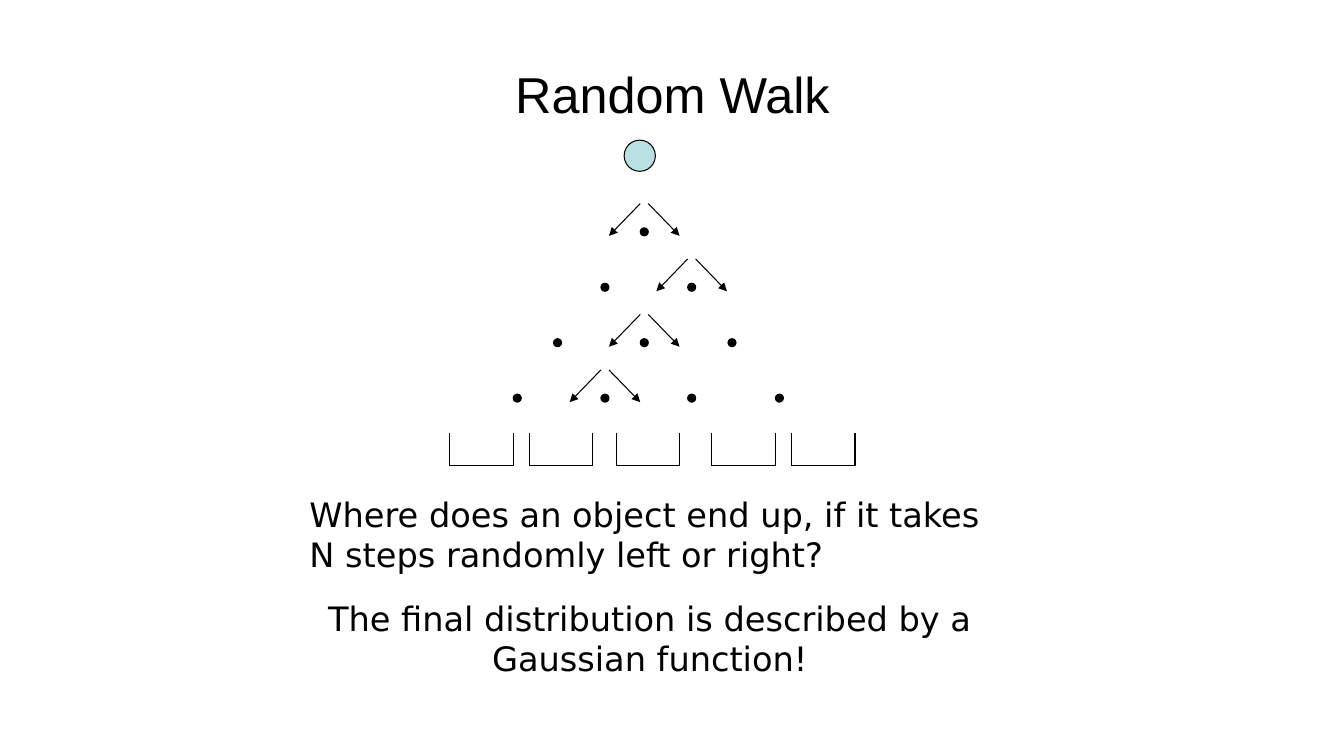
from lxml import etree
from pptx import Presentation
from pptx.dml.color import RGBColor
from pptx.enum.shapes import MSO_CONNECTOR, MSO_SHAPE
from pptx.enum.text import MSO_ANCHOR, PP_ALIGN
from pptx.oxml.ns import qn
from pptx.util import Inches, Pt

OVAL = MSO_SHAPE.OVAL
STRAIGHT = MSO_CONNECTOR.STRAIGHT
LEFT, CENTER = PP_ALIGN.LEFT, PP_ALIGN.CENTER
TOP, MIDDLE = MSO_ANCHOR.TOP, MSO_ANCHOR.MIDDLE

COLORS = {"ink": "000000", "ball": "BBE0E3", "paper": "FFFFFF"}
LINE_WIDTH = Pt(0.75)
TITLE_FONT = {"name": "Arial", "size": Pt(36)}
BODY_FONT = {"name": "DejaVu Sans", "size": Pt(24)}

# Each peg row: offsets of its pegs from the board's left, and the peg that is hit
PEG_ROWS = [
    ([1.89], 0),
    ([1.5, 2.36], 1),
    ([1.03, 1.89, 2.76], 1),
    ([0.63, 1.5, 2.36, 3.23], 1),
]
BIN_OFFSETS = [0, 0.79, 1.65, 2.6, 3.39]
PEG_SIZE, BALL_SIZE = 0.08, 0.31
ROW_PITCH = 0.55
BIN_WIDTH, BIN_HEIGHT = 0.63, 0.32


def color(name):
    return RGBColor.from_string(COLORS[name])


def add_text(page, box, text, font, align=LEFT, anchor=TOP):
    frame = page.shapes.add_textbox(*map(Inches, box)).text_frame
    frame.word_wrap = True
    frame.vertical_anchor = anchor
    para = frame.paragraphs[0]
    para.alignment = align
    span = para.add_run()
    span.text = text
    for key, value in font.items():
        setattr(span.font, key, value)
    span.font.color.rgb = color("ink")


def add_circle(page, left, top, size, fill):
    circle = page.shapes.add_shape(OVAL, *map(Inches, (left, top, size, size)))
    circle.shadow.inherit = False
    circle.fill.solid()
    circle.fill.fore_color.rgb = color(fill)
    circle.line.color.rgb = color("ink")
    circle.line.width = LINE_WIDTH


def add_line(page, start, end, arrow=False):
    line = page.shapes.add_connector(STRAIGHT, *map(Inches, (*start, *end)))
    line.line.color.rgb = color("ink")
    line.line.width = LINE_WIDTH
    if arrow:
        etree.SubElement(line.line._get_or_add_ln(), qn("a:tailEnd"), type="triangle")
    etree.SubElement(line._element.spPr, qn("a:effectLst"))


def add_fork(page, left, top):
    """Two arrows that part above the peg at this place."""
    start, end, reach = top - 0.24, top + 0.08, 0.31
    right = left + PEG_SIZE
    add_line(page, (left, start), (left - reach, end), arrow=True)
    add_line(page, (right, start), (right + reach, end), arrow=True)


def add_bin(page, left, top):
    right, bottom = left + BIN_WIDTH, top + BIN_HEIGHT
    corners = [(left, top), (left, bottom), (right, bottom), (right, top)]
    for start, end in zip(corners, corners[1:]):
        add_line(page, start, end)


def add_board(page, left, top):
    # Ball about to fall
    add_circle(page, left + 1.73, top, BALL_SIZE, "ball")

    # Pegs, with the choice of ways at the peg hit in each row
    for row, (offsets, hit) in enumerate(PEG_ROWS):
        row_top = top + 0.87 + row * ROW_PITCH
        for offset in offsets:
            add_circle(page, left + offset, row_top, PEG_SIZE, "ink")
        add_fork(page, left + offsets[hit], row_top)

    # Bins
    for offset in BIN_OFFSETS:
        add_bin(page, left + offset, top + 2.91)


def add_captions(page, left, top, width):
    height, pitch = 0.91, 1.03
    captions = [
        ("Where does an object end up, if it takes N steps randomly left or right?", LEFT),
        ("The final distribution is described by a Gaussian function!", CENTER),
    ]
    for index, (text, align) in enumerate(captions):
        add_text(page, (left, top + index * pitch, width, height), text, BODY_FONT, align)


def main():
    deck = Presentation()
    deck.slide_width, deck.slide_height = Inches(13.33), Inches(7.5)
    page = deck.slides.add_slide(deck.slide_layouts[6])
    page.background.fill.solid()
    page.background.fill.fore_color.rgb = color("paper")

    add_text(page, (0.67, 0.3, 12, 1.25), "Random Walk", TITLE_FONT, CENTER, MIDDLE)
    add_board(page, 4.46, 1.39)
    add_captions(page, 2.97, 4.85, 6.95)
    deck.save("out.pptx")


if __name__ == "__main__":
    main()
